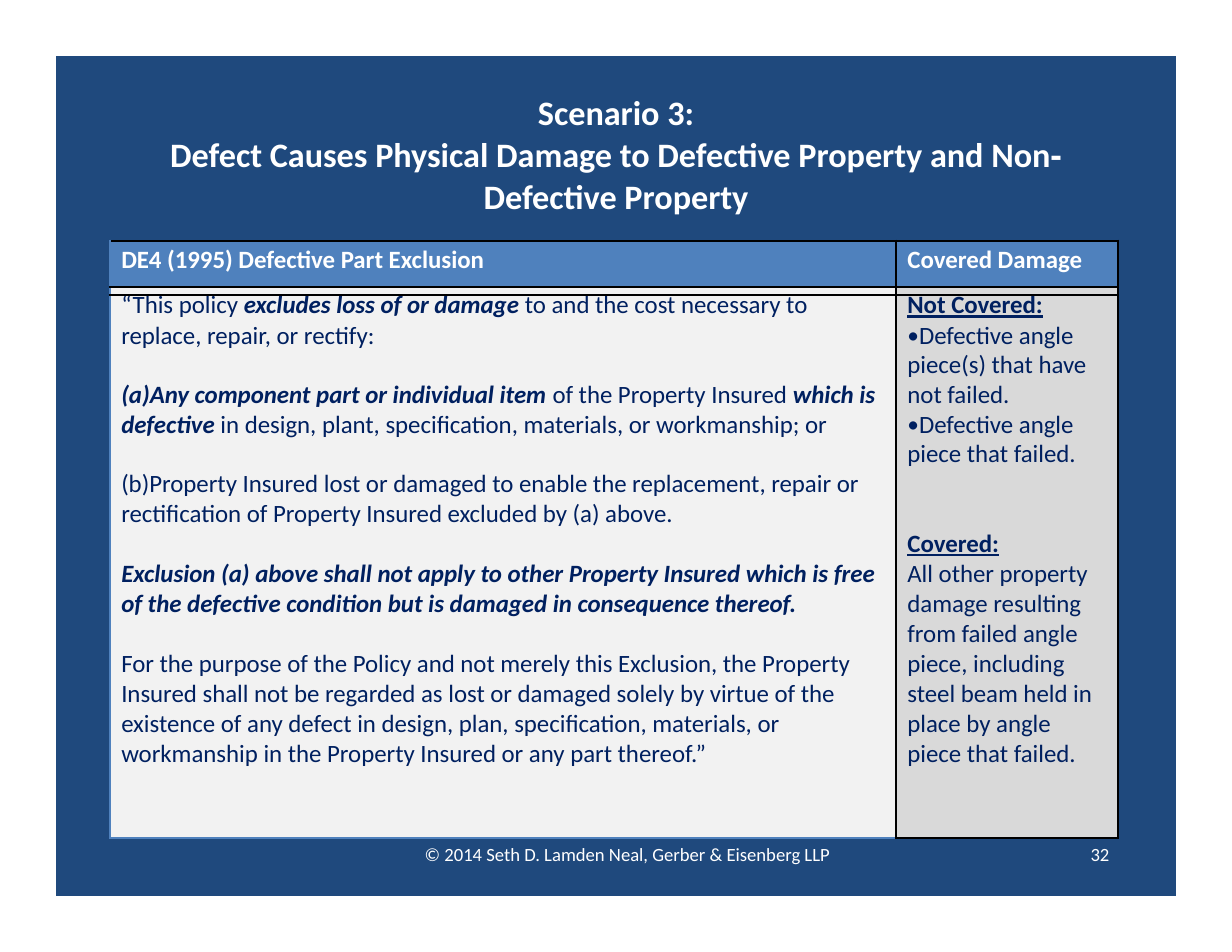
from lxml import etree
from pptx import Presentation
from pptx.dml.color import RGBColor
from pptx.enum.text import PP_ALIGN
from pptx.oxml.ns import qn
from pptx.util import Cm, Pt

CENTER, RIGHT = PP_ALIGN.CENTER, PP_ALIGN.RIGHT
NAVY = RGBColor(0x1F, 0x49, 0x7D)
BLUE = RGBColor(0x4F, 0x81, 0xBD)
INK = RGBColor(0x00, 0x20, 0x60)
PALE = RGBColor(0xF2, 0xF2, 0xF2)
GRAY = RGBColor(0xD9, 0xD9, 0xD9)
WHITE = RGBColor(0xFF, 0xFF, 0xFF)
BLACK = RGBColor(0x00, 0x00, 0x00)
FONT = "Calibri"
NO_GRID_STYLE = "{2D5ABB26-0587-4C30-8999-92F81FD0307C}"
BULLET = ("•", "")
BREAK = ("\n", "")

# Content: each line is a list of (text, style); b bold, i italic, u underlined
TITLE = [
    [("Scenario 3:", "b")],
    [("Defect Causes Physical Damage to Defective Property and Non‐", "b"), BREAK,
     ("Defective Property", "b")],
]
HEADERS = ["DE4 (1995) Defective Part Exclusion", "Covered Damage"]
FOOTER = "© 2014 Seth D. Lamden Neal, Gerber & Eisenberg LLP"
PAGE_NUMBER = "32"

# Table row -> lines
EXCLUSION = {
    3: [[("“This policy ", ""), ("excludes loss of or damage ", "bi"),
         ("to and the cost necessary to", "")],
        [("replace, repair, or rectify:", "")]],
    5: [[("(a)Any component part or individual item ", "bi"),
         ("of the Property Insured ", ""), ("which is", "bi")],
        [("defective ", "bi"),
         ("in design, plant, specification, materials, or workmanship; or", "")]],
    7: [[("(b)Property Insured lost or damaged to enable the replacement, repair or", "")]],
    8: [[("rectification of Property Insured excluded by (a) above.", "")]],
    10: [[("Exclusion (a) above shall not apply to other Property Insured which is free", "bi")]],
    11: [[("of the defective condition but is damaged in consequence thereof.", "bi")]],
    13: [[("For the purpose of the Policy and not merely this Exclusion, the Property", "")]],
    14: [[("Insured shall not be regarded as lost or damaged solely by virtue of the", "")]],
    15: [[("existence of any defect in design, plan, specification, materials, or", "")]],
    16: [[("workmanship in the Property Insured or any part thereof.”", "")]],
}
COVERAGE = {
    3: [[("Not Covered:", "bu")], [BULLET, ("Defective angle", "")]],
    4: [[("piece(s) that have", "")]],
    5: [[("not failed.", "")], [BULLET, ("Defective angle", "")]],
    6: [[("piece that failed.", "")]],
    9: [[("Covered:", "bu")]],
    10: [[("All other property", "")]],
    11: [[("damage resulting", "")]],
    12: [[("from failed angle", "")]],
    13: [[("piece, including", "")]],
    14: [[("steel beam held in", "")]],
    15: [[("place by angle", "")]],
    16: [[("piece that failed.", "")]],
}

# Grid
COLUMN_WIDTHS = [1.22, 17.83, 5.03, 1.32]
ROW_HEIGHTS = [4.19, 1.04, 0.2, 1.32, 0.68, 1.35] + [0.68] * 10 + [0.73, 1.42, 1.32]
HEADER_ROW, GAP_ROW, FIRST_TEXT_ROW, LAST_TEXT_ROW, END_ROW, FOOTER_ROW = 1, 2, 3, 16, 17, 18
LEFT_SIDE, LEFT, RIGHT_COLUMN, RIGHT_SIDE = range(4)
INDENT = 0.26


def write(cell, lines, size, color, left=INDENT, top=0.0, right=0.0, align=None, pitch=None):
    """Fill a cell; pitch is the exact spacing of its first line."""
    cell.margin_left, cell.margin_top, cell.margin_right = Cm(left), Cm(top), Cm(right)
    frame = cell.text_frame
    for index, line in enumerate(lines):
        para = frame.add_paragraph() if index else frame.paragraphs[0]
        if align is not None:
            para.alignment = align
        if pitch and index == 0:
            para.line_spacing = Pt(pitch)
        for text, style in line:
            if (text, style) == BULLET:
                add_bullet(para)
            elif (text, style) == BREAK:
                para.add_line_break()
            else:
                span = para.add_run()
                span.text = text
                font = span.font
                font.name, font.size = FONT, Pt(size)
                font.color.rgb = color
                font.bold, font.italic, font.underline = "b" in style, "i" in style, "u" in style


def add_bullet(para):
    props = para._p.get_or_add_pPr()
    props.set("marL", str(Cm(0.2)))
    props.set("indent", str(-Cm(0.2)))
    etree.SubElement(props, qn("a:buSzPct"), val="94000")
    etree.SubElement(props, qn("a:buFont"), typeface=FONT)
    etree.SubElement(props, qn("a:buChar"), char=BULLET[0])


def set_borders(cell, borders):
    props = cell._tc.get_or_add_tcPr()
    for side in "LRTB":
        if side in borders:
            line = etree.SubElement(props, qn("a:ln" + side), w=str(Pt(1.5)))
            fill = etree.SubElement(line, qn("a:solidFill"))
            etree.SubElement(fill, qn("a:srgbClr"), val=str(borders[side]))


def borders_for(row, column):
    """Rules around the two text columns, from header to end row."""
    if not HEADER_ROW <= row <= END_ROW:
        return {}
    if column == LEFT_SIDE:
        return {"R": BLUE}
    if column == RIGHT_SIDE:
        return {"L": BLACK}
    borders = {"L": BLUE if column == LEFT else BLACK, "R": BLACK}
    if row == HEADER_ROW:
        borders.update(T=BLACK, B=BLACK)
    elif row == GAP_ROW:
        borders["T"] = BLACK
    elif row == END_ROW:
        borders["B"] = BLUE if column == LEFT else BLACK
    return borders


def fill_for(row, column):
    if column in (LEFT_SIDE, RIGHT_SIDE) or row in (0, FOOTER_ROW):
        return NAVY
    if row == HEADER_ROW:
        return BLUE
    return PALE if column == LEFT else GRAY


deck = Presentation()
deck.slide_width, deck.slide_height = Cm(27.94), Cm(21.59)
page = deck.slides.add_slide(deck.slide_layouts[6])

# Table frame
table = page.shapes.add_table(len(ROW_HEIGHTS), len(COLUMN_WIDTHS),
                              Cm(1.27), Cm(1.27), Cm(25.4), Cm(19.05)).table
table.first_row = table.horz_banding = False
table._tbl.tblPr.find(qn("a:tableStyleId")).text = NO_GRID_STYLE
for column, width in zip(table.columns, COLUMN_WIDTHS):
    column.width = Cm(width)
for row, height in zip(table.rows, ROW_HEIGHTS):
    row.height = Cm(height)

# Fills, borders and margins
for row in range(len(ROW_HEIGHTS)):
    for column in range(len(COLUMN_WIDTHS)):
        cell = table.cell(row, column)
        cell.margin_left = cell.margin_right = cell.margin_top = cell.margin_bottom = 0
        set_borders(cell, borders_for(row, column))
        cell.fill.solid()
        cell.fill.fore_color.rgb = fill_for(row, column)

# Merged title and side bands
table.cell(0, LEFT_SIDE).merge(table.cell(0, RIGHT_SIDE))
for side in (LEFT_SIDE, RIGHT_SIDE):
    table.cell(HEADER_ROW, side).merge(table.cell(GAP_ROW, side))
    table.cell(FIRST_TEXT_ROW, side).merge(table.cell(LAST_TEXT_ROW, side))

# Text
write(table.cell(0, 0), TITLE, 22, WHITE, left=0, top=0.85, align=CENTER)
for column, header in enumerate(HEADERS, LEFT):
    write(table.cell(HEADER_ROW, column), [[(header, "b")]], 16, WHITE, top=0.1)
for column, body in ((LEFT, EXCLUSION), (RIGHT_COLUMN, COVERAGE)):
    for row, lines in body.items():
        pitch = 16.1 if row == FIRST_TEXT_ROW else 16.8
        write(table.cell(row, column), lines, 16, INK, pitch=pitch)
write(table.cell(FOOTER_ROW, LEFT), [[(FOOTER, "")]], 12, WHITE, left=7.14, top=0.13)
write(table.cell(FOOTER_ROW, RIGHT_COLUMN), [[(PAGE_NUMBER, "")]], 12, WHITE,
      top=0.13, right=0.19, align=RIGHT)

# Tiny type in empty cells keeps the rows at their set heights
for cell in table.iter_cells():
    if not cell.text_frame.text:
        etree.SubElement(cell.text_frame.paragraphs[0]._p, qn("a:endParaRPr"), sz="100")

deck.save("out.pptx")
